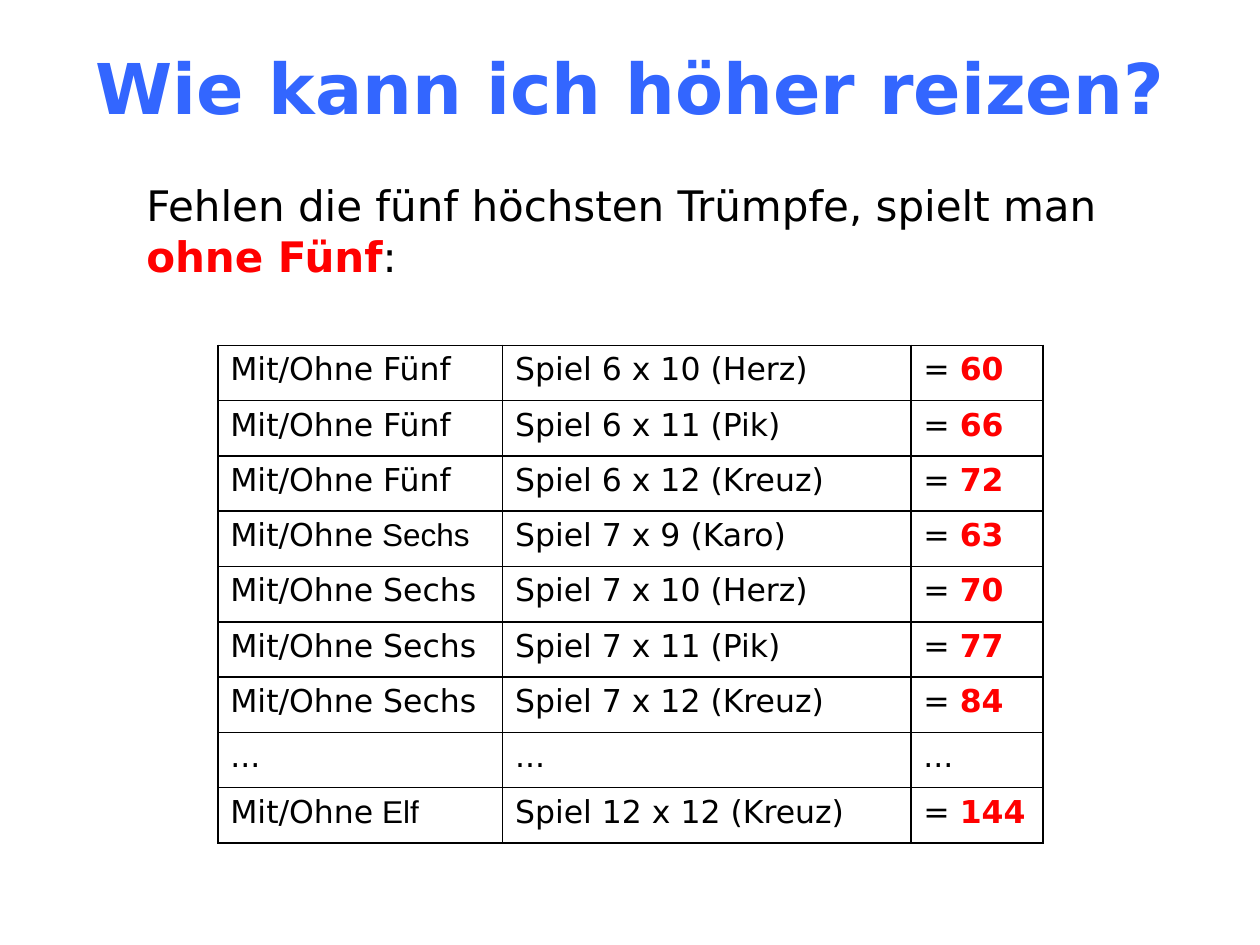
from lxml.etree import SubElement
from pptx import Presentation
from pptx.dml.color import RGBColor
from pptx.enum.text import MSO_ANCHOR, PP_ALIGN
from pptx.oxml.ns import qn
from pptx.util import Cm, Pt

# Content: a run is (text, style)
COLORS = {"blue": "3366FF", "red": "FF0000", "black": "000000"}
STYLES = {  # font, colour, bold
    "title": ("DejaVu Sans", "blue", True),
    "plain": ("DejaVu Sans", "black", False),
    "strong": ("DejaVu Sans", "red", True),
    "arial": ("Arial", "black", False),
}
TITLE = [("Wie kann ich höher reizen?", "title")]
INTRO = [("Fehlen die fünf höchsten Trümpfe, spielt man ", "plain"),
         ("ohne Fünf", "strong"), (":", "plain")]
FIVE = [("Mit/Ohne Fünf", "plain")]
SIX = [("Mit/Ohne Sechs", "plain")]
SIX_ARIAL = [("Mit/Ohne", "plain"), (" Sechs", "arial")]
ELEVEN = [("Mit/Ohne", "plain"), (" Elf", "arial")]
GAMES = [  # matadors, multiplier, suit value, suit
    (FIVE, 6, 10, "Herz"),
    (FIVE, 6, 11, "Pik"),
    (FIVE, 6, 12, "Kreuz"),
    (SIX_ARIAL, 7, 9, "Karo"),
    (SIX, 7, 10, "Herz"),
    (SIX, 7, 11, "Pik"),
    (SIX, 7, 12, "Kreuz"),
    None,
    (ELEVEN, 12, 12, "Kreuz"),
]
COL_WIDTHS = [5.74, 8.23, 2.67]
ROW_HEIGHT = 1.115


def add_runs(p, runs, size):
    for text, style in runs:
        font, color, bold = STYLES[style]
        r = p.add_run()
        r.text = text
        r.font.name, r.font.size, r.font.bold = font, Pt(size), bold
        r.font.color.rgb = RGBColor.from_string(COLORS[color])


def game_cells(game):
    if game is None:
        return [[("...", "plain")]] * 3
    matadors, factor, value, suit = game
    return [matadors,
            [(f"Spiel {factor} x {value} ({suit})", "plain")],
            [("= ", "plain"), (str(factor * value), "strong")]]


def set_borders(cell):
    tc_pr = cell._tc.get_or_add_tcPr()
    for i, side in enumerate(("lnL", "lnR", "lnT", "lnB")):
        ln = SubElement(tc_pr, qn(f"a:{side}"), w=str(Pt(1)))
        fill = SubElement(ln, qn("a:solidFill"))
        SubElement(fill, qn("a:srgbClr"), val=COLORS["black"])
        tc_pr.remove(ln)
        tc_pr.insert(i, ln)  # borders precede the fill


prs = Presentation()
prs.slide_width, prs.slide_height = Cm(25.4), Cm(19.05)
s = prs.slides.add_slide(prs.slide_layouts[5])

# Title
title = s.shapes.title
title.left, title.top, title.width, title.height = Cm(0), Cm(0.76), Cm(25.4), Cm(1.98)
tf = title.text_frame
tf.vertical_anchor = MSO_ANCHOR.MIDDLE
tf.paragraphs[0].alignment = PP_ALIGN.CENTER
add_runs(tf.paragraphs[0], TITLE, 40)

# Introduction
tf = s.shapes.add_textbox(Cm(2.7), Cm(3.5), Cm(20), Cm(2.29)).text_frame
tf.word_wrap = True
add_runs(tf.paragraphs[0], INTRO, 24)

# Table of bids
frame = s.shapes.add_table(len(GAMES), len(COL_WIDTHS), Cm(4.39), Cm(6.96),
                           Cm(sum(COL_WIDTHS)), Cm(ROW_HEIGHT * len(GAMES)))
table = frame.table
table.first_row = table.horz_banding = False
for col, width in zip(table.columns, COL_WIDTHS):
    col.width = Cm(width)
for row, game in zip(table.rows, GAMES):
    row.height = Cm(ROW_HEIGHT)
    for cell, runs in zip(row.cells, game_cells(game)):
        cell.fill.background()
        set_borders(cell)
        add_runs(cell.text_frame.paragraphs[0], runs, 18)

prs.save("out.pptx")
